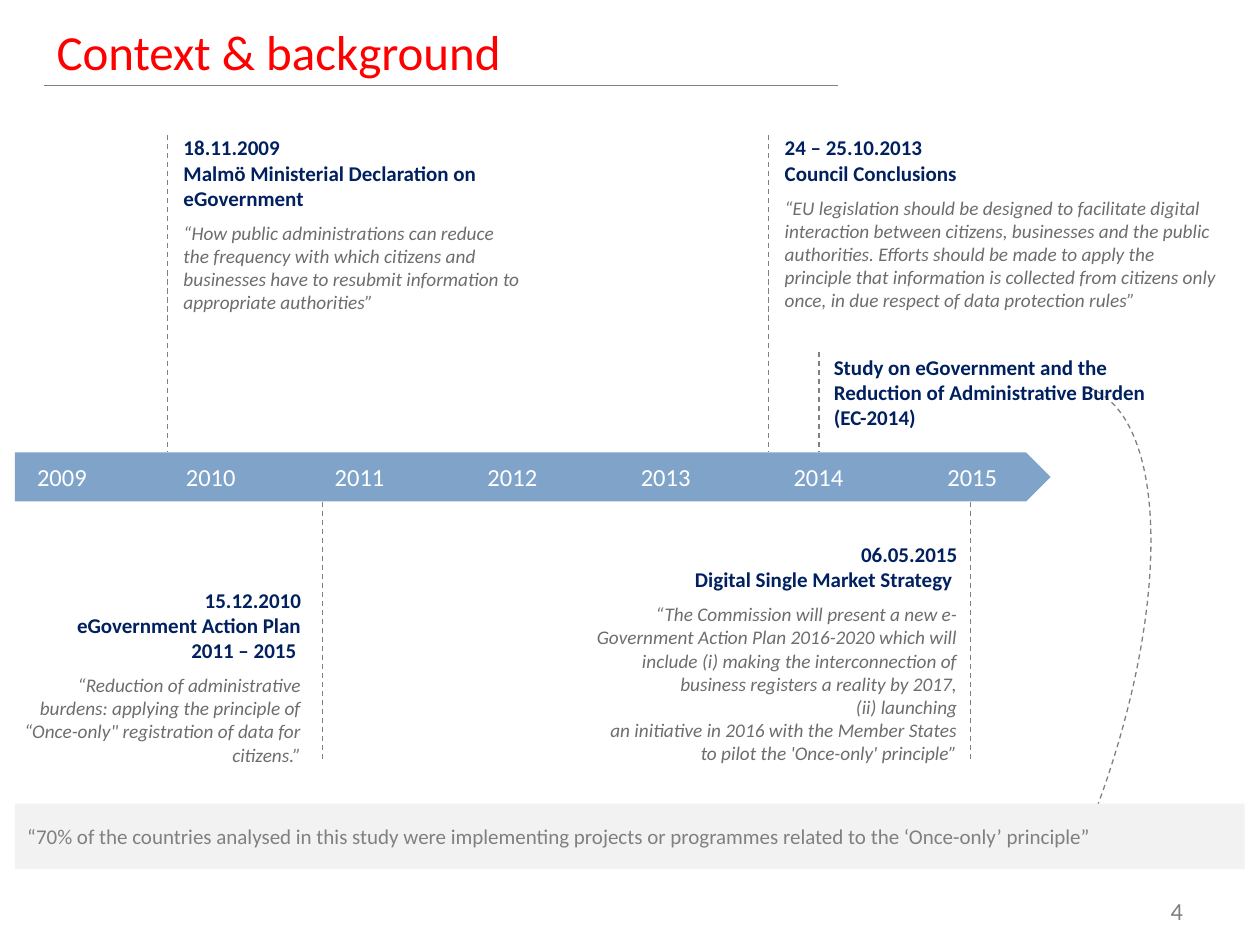
from dataclasses import dataclass

from lxml import etree
from pptx import Presentation
from pptx import util as u
from pptx.dml.color import RGBColor
from pptx.enum import dml, shapes, text
from pptx.oxml import ns


@dataclass(frozen=True)
class Theme:
    font: str = "Calibri"
    title: str = "FF0000"
    heading: str = "002060"
    quote: str = "6D6D6D"
    grey: str = "808080"
    arrow: str = "80A3CA"
    band: str = "F2F2F2"
    white: str = "FFFFFF"
    title_size: int = 28
    year_size: int = 14
    heading_size: int = 12
    quote_size: int = 11
    line_width: float = 0.75


THEME = Theme()
LEFT, CENTER, RIGHT = text.PP_ALIGN.LEFT, text.PP_ALIGN.CENTER, text.PP_ALIGN.RIGHT
PAD = (0.25, 0.13, 0.25, 0.13)
ARROW_TOP, ARROW_HEIGHT = 9.12, 0.99
ARROW_BOTTOM = ARROW_TOP + ARROW_HEIGHT
YEAR_CENTERS = (1.25, 4.25, 7.25, 10.33, 13.42, 16.5, 19.6)
YEAR_WIDTH = 1.9


def write(para, words, size=12, color=THEME.grey, bold=False, italic=False,
          align=LEFT, before=0):
    para.alignment = align
    para.space_before = u.Pt(before)
    for index, part in enumerate(words.split("\n")):
        if index:
            para.add_line_break()
        span = para.add_run()
        span.text = part
        font = span.font
        font.name, font.size = THEME.font, u.Pt(size)
        font.bold, font.italic = bold, italic
        font.color.rgb = RGBColor.from_string(color)


class Painter:
    def __init__(self, slide, theme):
        self.slide = slide
        self.theme = theme

    def fill_frame(self, frame, paras, pad, anchor):
        frame.word_wrap = True
        frame.vertical_anchor = anchor
        (frame.margin_left, frame.margin_top,
         frame.margin_right, frame.margin_bottom) = map(u.Cm, pad)
        for index, (words, style) in enumerate(paras):
            para = frame.add_paragraph() if index else frame.paragraphs[0]
            write(para, words, **style)

    def label(self, area, paras, pad=PAD, anchor=text.MSO_ANCHOR.TOP):
        box = self.slide.shapes.add_textbox(*map(u.Cm, area))
        self.fill_frame(box.text_frame, paras, pad, anchor)

    def block(self, kind, area, fill, paras=()):
        shape = self.slide.shapes.add_shape(kind, *map(u.Cm, area))
        shape.shadow.inherit = False
        shape.fill.solid()
        shape.fill.fore_color.rgb = RGBColor.from_string(fill)
        shape.line.fill.background()
        self.fill_frame(shape.text_frame, paras, PAD, text.MSO_ANCHOR.MIDDLE)

    def stroke(self, line, dashed=True):
        line.color.rgb = RGBColor.from_string(self.theme.grey)
        line.width = u.Pt(self.theme.line_width)
        if dashed:
            line.dash_style = dml.MSO_LINE.DASH

    def line(self, start, end, dashed=True):
        line = self.slide.shapes.add_connector(
            shapes.MSO_CONNECTOR.STRAIGHT, *map(u.Cm, start + end))
        self.stroke(line.line, dashed)
        etree.SubElement(line._element.spPr, ns.qn("a:effectLst"))

    def arc(self, area, rotation, angles):
        arc = self.slide.shapes.add_shape(shapes.MSO_SHAPE.ARC, *map(u.Cm, area))
        arc.shadow.inherit = False
        arc.fill.background()
        arc.rotation = rotation
        for index, angle in enumerate(angles):
            arc.adjustments[index] = angle
        self.stroke(arc.line)

    def event(self, area, headings, quotes=(), align=LEFT):
        heading = dict(size=self.theme.heading_size, color=self.theme.heading,
                       bold=True, align=align)
        quote = dict(size=self.theme.quote_size, color=self.theme.quote,
                     italic=True, align=align)
        paras = [(words, heading) for words in headings]
        paras += [(words, dict(quote, before=0 if index else 6))
                  for index, words in enumerate(quotes)]
        self.label(area, paras, pad=(0.3, 0, 0, 0))


def main():
    deck = Presentation()
    deck.slide_width, deck.slide_height = u.Cm(25.4), u.Cm(19.05)
    page = Painter(deck.slides.add_slide(deck.slide_layouts[6]), THEME)

    page.line((0.89, 1.73), (16.89, 1.73), dashed=False)
    page.arc((16.1, 7.32, 6.2, 15.8), 20.4, (162, 5.86))
    page.label((0.89, 0.33, 16, 1.4),
               [("Context & background", dict(size=THEME.title_size, color=THEME.title))],
               anchor=text.MSO_ANCHOR.MIDDLE)
    page.label((22.3, 17.93, 1.8, 1.4),
               [("4", dict(size=THEME.year_size, align=RIGHT))])

    page.block(shapes.MSO_SHAPE.PENTAGON, (0.3, ARROW_TOP, 20.88, ARROW_HEIGHT), THEME.arrow)
    for year, center in enumerate(YEAR_CENTERS, 2009):
        page.label((center - YEAR_WIDTH / 2, ARROW_TOP, YEAR_WIDTH, ARROW_HEIGHT),
                   [(str(year), dict(size=THEME.year_size, color=THEME.white, align=CENTER))],
                   pad=(0, 0, 0, 0), anchor=text.MSO_ANCHOR.MIDDLE)

    for x, top in ((3.38, 2.72), (15.49, 2.72), (16.51, 7.09)):
        page.line((x, top), (x, ARROW_TOP))
    for x in (6.5, 19.56):
        page.line((x, ARROW_BOTTOM), (x, 15.32))

    page.event((3.4, 2.72, 7.09, 2.74),
               ["18.11.2009", "Malmö Ministerial Declaration on eGovernment"],
               ["“How public administrations can reduce the frequency with which citizens "
                "and businesses have to resubmit information to appropriate authorities”"])
    page.event((15.52, 2.72, 9.17, 3.96),
               ["24 – 25.10.2013", "Council Conclusions"],
               ["“EU legislation should be designed to facilitate digital interaction between "
                "citizens, businesses and the public authorities. Efforts should be made to "
                "apply the principle that information is collected from citizens only once, "
                "in due respect of data protection rules”"])
    page.event((16.51, 7.14, 6.6, 2.06),
               ["Study on eGovernment and the Reduction of Administrative Burden (EC-2014)"])
    page.event((-0.1, 11.84, 6.17, 3.6),
               ["15.12.2010", "eGovernment Action Plan\n2011 – 2015 "],
               ["“Reduction of administrative burdens: applying the principle of “Once-only\" "
                "registration of data for citizens.”"], align=RIGHT)
    page.event((11.71, 10.92, 7.59, 4.5),
               ["06.05.2015", "Digital Single Market Strategy "],
               ["“The Commission will present a new e-Government Action Plan 2016-2020 which "
                "will include (i) making the interconnection of business registers a reality "
                "by 2017,",
                "(ii) launching",
                "an initiative in 2016 with the Member States to pilot the 'Once-only' "
                "principle”"], align=RIGHT)

    page.block(shapes.MSO_SHAPE.RECTANGLE, (0.3, 16.2, 24.79, 1.32), THEME.band,
               [("“70% of the countries analysed in this study were implementing projects or "
                 "programmes related to the ‘Once-only’ principle”",
                 dict(size=THEME.heading_size))])

    deck.save("out.pptx")


if __name__ == "__main__":
    main()
